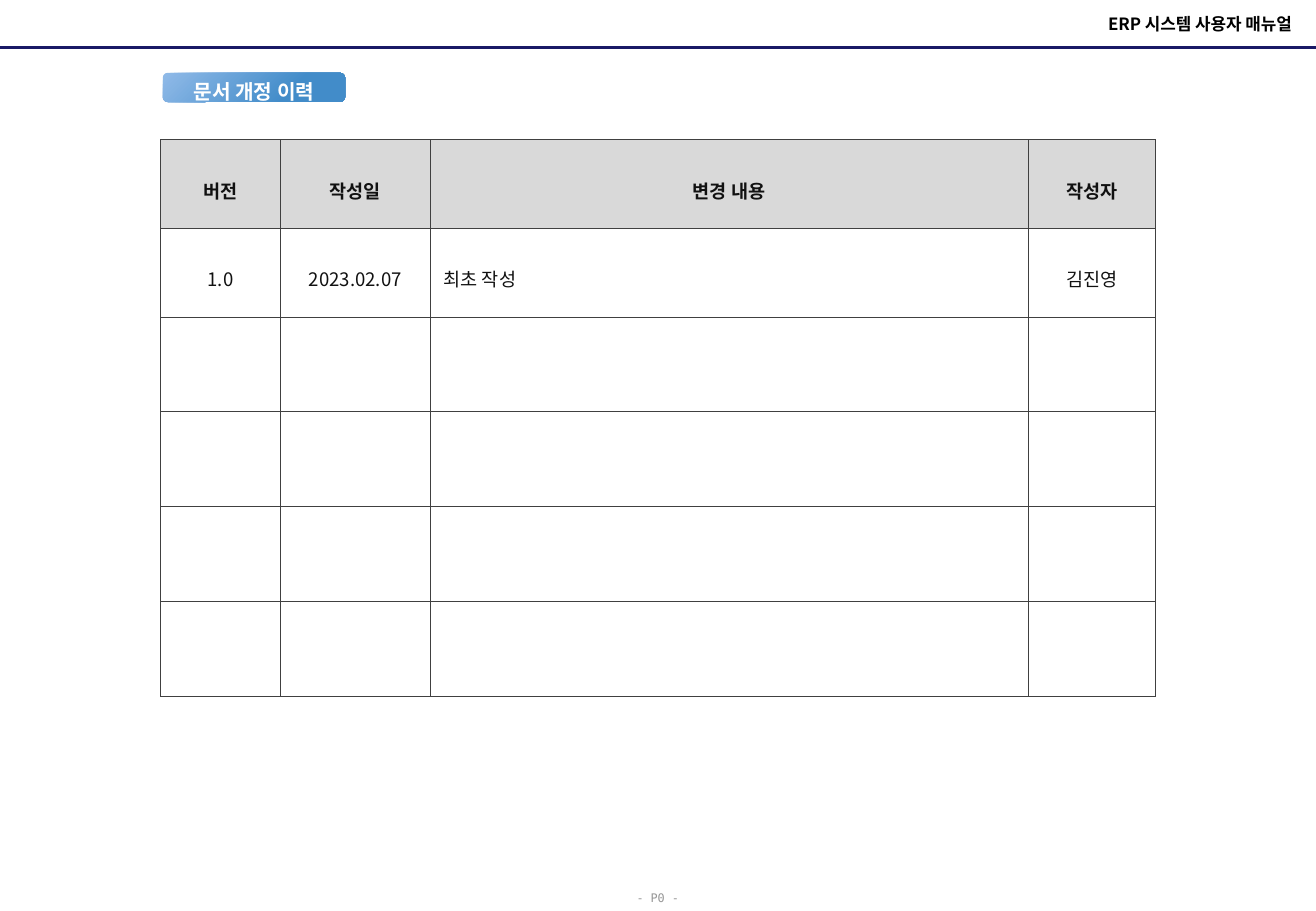
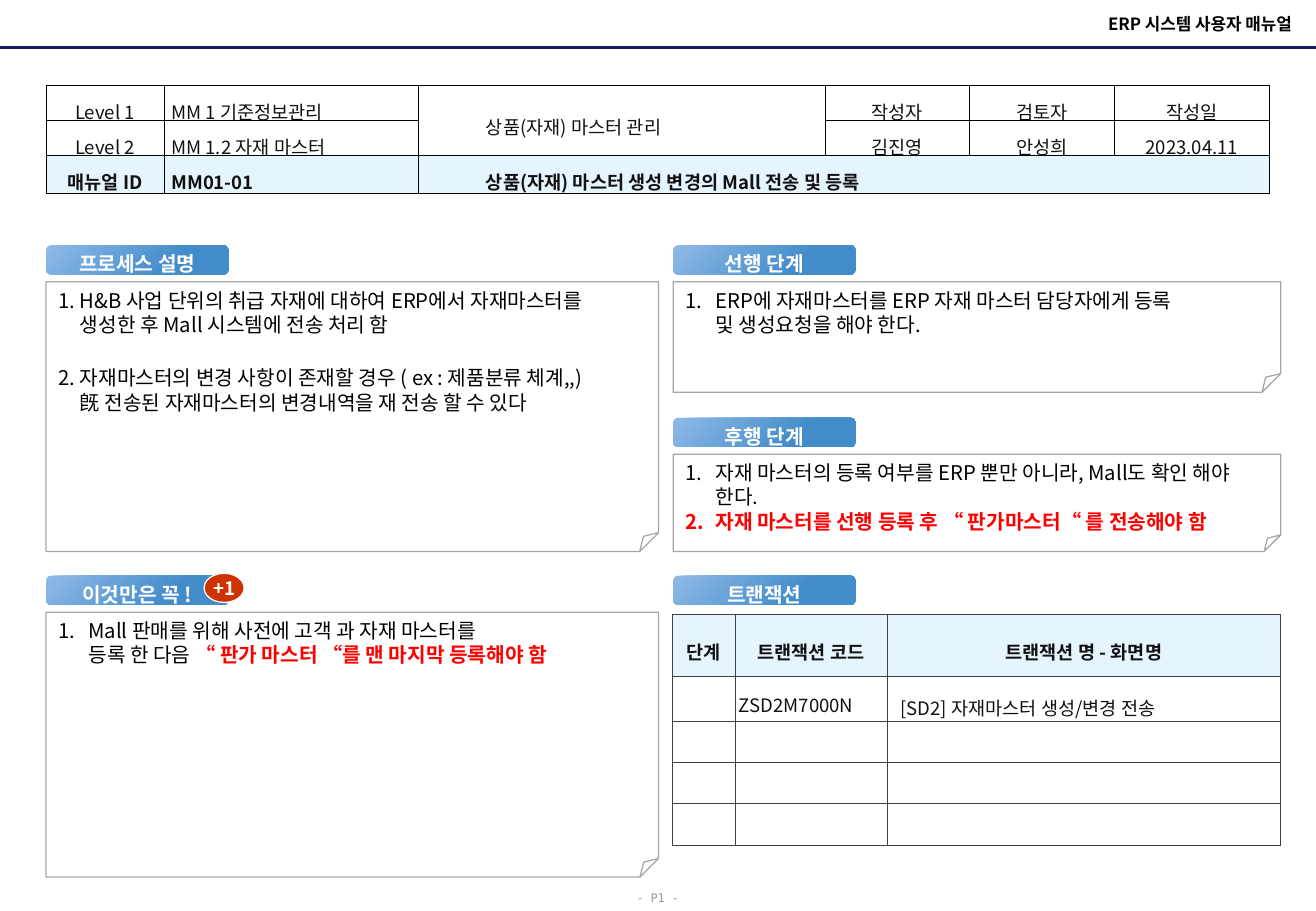
import pptx
import pptx.dml.color
import pptx.enum.shapes
import pptx.enum.text
import pptx.oxml
import pptx.oxml.ns
import pptx.util

Inches = pptx.util.Inches
Pt = pptx.util.Pt
RGBColor = pptx.dml.color.RGBColor
ShapeType = pptx.enum.shapes.MSO_SHAPE
Align = pptx.enum.text.PP_ALIGN
Anchor = pptx.enum.text.MSO_ANCHOR

BLACK = RGBColor(0x00, 0x00, 0x00)
INK = RGBColor(0x11, 0x11, 0x11)
WHITE = RGBColor(0xFF, 0xFF, 0xFF)
NAVY = RGBColor(0x19, 0x19, 0x66)
RED = RGBColor(0xFF, 0x00, 0x00)
BRICK = RGBColor(0xCC, 0x33, 0x00)
FOOTER_GRAY = RGBColor(0x96, 0x96, 0x96)
NOTE_GRAY = RGBColor(0xA6, 0xA6, 0xA6)
GRID_GRAY = RGBColor(0x40, 0x40, 0x40)
HEADER_GRAY = RGBColor(0xD9, 0xD9, 0xD9)
PALE_BLUE = RGBColor(0xE6, 0xF4, 0xFE)
BADGE_LIGHT = RGBColor(0x90, 0xBA, 0xE8)
BADGE_DARK = RGBColor(0x42, 0x8C, 0xC9)

FONT = "Noto Sans CJK KR"
MONO = "DejaVu Sans Mono"
WIDTH, HEIGHT = 10.83, 7.5


def add_element(parent, tag, **attributes):
    element = pptx.oxml.parse_xml(f"<{tag} {pptx.oxml.ns.nsdecls('a')}/>")
    for name, value in attributes.items():
        element.set(name, str(value))
    parent.append(element)
    return element


def write(frame, paragraphs, size=12, color=BLACK, bold=False, font=FONT, align=Align.LEFT,
          anchor=Anchor.TOP, insets=(0.1, 0.05, 0.1, 0.05), wrap=True, line_spacing=None,
          space_before=0, hanging=0, indent=0):
    """Fill a frame; a paragraph is a list of strings or of (string, emphasis colour)."""
    frame.word_wrap = wrap
    frame.vertical_anchor = anchor
    frame.margin_left, frame.margin_top, frame.margin_right, frame.margin_bottom = map(Inches, insets)
    for index, runs in enumerate(paragraphs):
        paragraph = frame.add_paragraph() if index else frame.paragraphs[0]
        paragraph.alignment = align
        if line_spacing:
            paragraph.line_spacing = line_spacing
        if index and space_before:
            paragraph.space_before = Pt(space_before)
        properties = paragraph._p.get_or_add_pPr()
        if hanging:
            properties.set("marL", str(Inches(hanging)))
            properties.set("indent", str(-Inches(hanging)))
            add_element(properties, "a:buFont", typeface="+mj-lt")
            add_element(properties, "a:buAutoNum", type="arabicPeriod")
        elif indent:
            properties.set("marL", str(Inches(indent)))
        for item in runs:
            text, emphasis = (item, None) if isinstance(item, str) else item
            for number, line in enumerate(text.split("\v")):
                if number:
                    paragraph.add_line_break()
                run = paragraph.add_run()
                run.text = line
                run.font.size = Pt(size)
                run.font.bold = bold or emphasis is not None
                run.font.color.rgb = emphasis or color
                run.font.name = font
                add_element(run.font._element, "a:ea", typeface=font)


class Manual:
    """Holds the manual's style and its current slide."""

    def __init__(self):
        self.presentation = pptx.Presentation()
        self.presentation.slide_width = Inches(WIDTH)
        self.presentation.slide_height = Inches(HEIGHT)
        self.slide = None

    def new_slide(self, page):
        self.slide = self.presentation.slides.add_slide(self.presentation.slide_layouts[5])
        title = self.slide.shapes.title
        title.left, title.top, title.width, title.height = map(Inches, (6.04, 0.06, 4.69, 0.27))
        write(title.text_frame, [["ERP 시스템 사용자 매뉴얼"]], size=10, bold=True,
              align=Align.RIGHT, anchor=Anchor.MIDDLE)
        rule = self.slide.shapes.add_connector(
            pptx.enum.shapes.MSO_CONNECTOR.STRAIGHT, 0, Inches(0.39), Inches(WIDTH), Inches(0.39))
        rule.line.color.rgb = NAVY
        rule.line.width = Pt(1.5)
        add_element(rule._element.spPr, "a:effectLst")
        footer = self.slide.shapes.add_textbox(*map(Inches, (5.14, 7.25, 0.56, 0.25)))
        write(footer.text_frame, [[f"- P{page} -"]], size=7, color=FOOTER_GRAY, font=MONO,
              wrap=False, line_spacing=1.3)

    def shape(self, kind, at, line=None):
        shape = self.slide.shapes.add_shape(kind, *map(Inches, at))
        shape.shadow.inherit = False
        shape.fill.background()
        if line is None:
            shape.line.fill.background()
        else:
            shape.line.color.rgb = line
            shape.line.width = Pt(0.75)
        return shape

    def badge(self, text, left, top):
        badge = self.shape(ShapeType.ROUNDED_RECTANGLE, (left, top, 1.5, 0.24))
        badge.fill.gradient()
        badge.fill.gradient_angle = 315
        stops = badge.fill.gradient_stops
        for stop, color, position in zip(stops, (BADGE_LIGHT, BADGE_DARK), (0, 0.7)):
            stop.color.rgb = color
            stop.position = position
        write(badge.text_frame, [[text]], color=WHITE, bold=True, align=Align.CENTER,
              anchor=Anchor.MIDDLE, insets=(0, 0, 0, 0.04), line_spacing=1.5)

    def note(self, at, fold, paragraphs, **text_format):
        note = self.shape(ShapeType.FOLDED_CORNER, at, line=NOTE_GRAY)
        guides = next(note._element.iter(pptx.oxml.ns.qn("a:avLst")))
        add_element(guides, "a:gd", name="adj", fmla=f"val {round(fold * 100000)}")
        write(note.text_frame, paragraphs, **{"hanging": 0.25, **text_format})

    def counter(self, text, at):
        counter = self.shape(ShapeType.OVAL, at, line=WHITE)
        counter.fill.solid()
        counter.fill.fore_color.rgb = BRICK
        write(counter.text_frame, [[text]], size=11, color=WHITE, bold=True,
              align=Align.CENTER, anchor=Anchor.MIDDLE, wrap=False)

    def table(self, left, top, columns, rows, texts, strong_row, strong_fill, border=GRID_GRAY,
              plain_fill=None, merges=(), cell_format=None):
        """Draw a grid with one strong row; cell_format(row, column) gives text options."""
        frame = self.slide.shapes.add_table(len(rows), len(columns), Inches(left), Inches(top),
                                            Inches(sum(columns)), Inches(sum(rows)))
        table = frame.table
        table.first_row = table.horz_banding = False
        for column, width in zip(table.columns, columns):
            column.width = Inches(width)
        for row, height in zip(table.rows, rows):
            row.height = Inches(height)
        for first, last in merges:
            table.cell(*first).merge(table.cell(*last))
        for row in range(len(rows)):
            for column in range(len(columns)):
                cell = table.cell(row, column)
                text = texts[row][column] if row < len(texts) else ""
                options = {"size": 11, "color": INK, "bold": row == strong_row,
                           "line_spacing": 1.3, "insets": (0.11, 0.08, 0.11, 0.05)}
                options.update(cell_format(row, column))
                if not text:
                    options.update(insets=(0, 0, 0, 0), line_spacing=None)
                self.fill_cell(cell, text, options, border,
                               strong_fill if row == strong_row else plain_fill)

    def fill_cell(self, cell, text, options, border, fill):
        insets = options.pop("insets")
        write(cell.text_frame, [[text]], **options)
        cell.margin_left, cell.margin_top, cell.margin_right, cell.margin_bottom = map(Inches, insets)
        cell.vertical_anchor = Anchor.MIDDLE
        properties = cell._tc.get_or_add_tcPr()
        for side in ("a:lnL", "a:lnR", "a:lnT", "a:lnB"):
            line = add_element(properties, side, w=Pt(0.5))
            add_element(add_element(line, "a:solidFill"), "a:srgbClr", val=border)
        if fill is None:
            cell.fill.background()
        else:
            cell.fill.solid()
            cell.fill.fore_color.rgb = fill


def history_format(row, column):
    return {"align": Align.LEFT if row and column == 2 else Align.CENTER}


def document_format(row, column):
    return {"align": Align.LEFT if column in (1, 2) else Align.CENTER,
            "indent": 0.5 if column == 2 else 0, "insets": (0.06, 0.04, 0.06, 0.01)}


def transaction_format(row, column):
    options = {"align": Align.LEFT if row else Align.CENTER}
    if row and column == 1:
        options["insets"] = (0.03, 0.03, 0, 0)
    return options


def build_history(manual):
    manual.new_slide(0)
    manual.table(1.32, 1.15, (0.99, 1.23, 4.92, 1.05), [0.73] * 2 + [0.78] * 4,
                 [["버전", "작성일", "변경 내용", "작성자"],
                  ["1.0", "2023.02.07", "최초 작성", "김진영"]],
                 strong_row=0, strong_fill=HEADER_GRAY, cell_format=history_format)
    manual.badge("문서 개정 이력", 1.34, 0.6)


def build_process(manual):
    left, right = 0.38, 5.54
    manual.new_slide(1)
    manual.table(left, 0.7, (0.97, 2.09, 3.35, 1.19, 1.19, 1.28), (0.26, 0.26, 0.32),
                 [["Level 1", "MM 1 기준정보관리", "상품(자재) 마스터 관리", "작성자", "검토자", "작성일"],
                  ["Level 2", "MM 1.2 자재 마스터", "", "김진영", "안성희", "2023.04.11"],
                  ["매뉴얼 ID", "MM01-01", "상품(자재) 마스터 생성 변경의 Mall 전송 및 등록", "", "", ""]],
                 strong_row=2, strong_fill=PALE_BLUE, border=BLACK, plain_fill=WHITE,
                 merges=[((0, 2), (1, 2)), ((2, 2), (2, 5))], cell_format=document_format)
    manual.table(5.53, 5.06, (0.52, 1.25, 3.24), [0.51] + [0.34] * 4,
                 [["단계", "트랜잭션 코드", "트랜잭션 명 - 화면명"],
                  ["", "ZSD2M7000N", "[SD2] 자재마스터 생성/변경 전송"]],
                 strong_row=0, strong_fill=PALE_BLUE, cell_format=transaction_format)
    for text, x, y in (("프로세스 설명", left, 2.02), ("선행 단계", right, 2.02),
                       ("후행 단계", right, 3.44), ("이것만은 꼭 !", left, 4.74),
                       ("트랜잭션", right, 4.74)):
        manual.badge(text, x, y)
    manual.counter("+1", (1.68, 4.72, 0.33, 0.24))
    manual.note((left, 2.32, 5.04, 2.22), 0.07,
                [["H&B 사업 단위의 취급 자재에 대하여 ERP에서 자재마스터를\v생성한 후 Mall 시스템에 전송 처리 함"],
                 ["자재마스터의 변경 사항이 존재할 경우 ( ex : 제품분류 체계,,)\v"
                  "旣 전송된 자재마스터의 변경내역을 재 전송 할 수 있다"]],
                hanging=0.18, space_before=17.4)
    manual.note((right, 2.32, 5, 0.91), 0.17,
                [["ERP에 자재마스터를 ERP 자재 마스터 담당자에게 등록\v및 생성요청을 해야 한다."]])
    manual.note((right, 3.74, 5, 0.8), 0.17,
                [["자재 마스터의 등록 여부를 ERP 뿐만 아니라, Mall도 확인 해야 한다."],
                 [("자재 마스터를 선행 등록 후 “ 판가마스터“ 를 전송해야 함", RED)]])
    manual.note((left, 5.04, 5.04, 2.18), 0.07,
                [["Mall 판매를 위해 사전에 고객 과 자재 마스터를\v등록 한 다음 ",
                  ("“ 판가 마스터 “를 맨 마지막 등록해야 함", RED)]])


def main():
    manual = Manual()
    build_history(manual)
    build_process(manual)
    manual.presentation.save("out.pptx")


if __name__ == "__main__":
    main()
